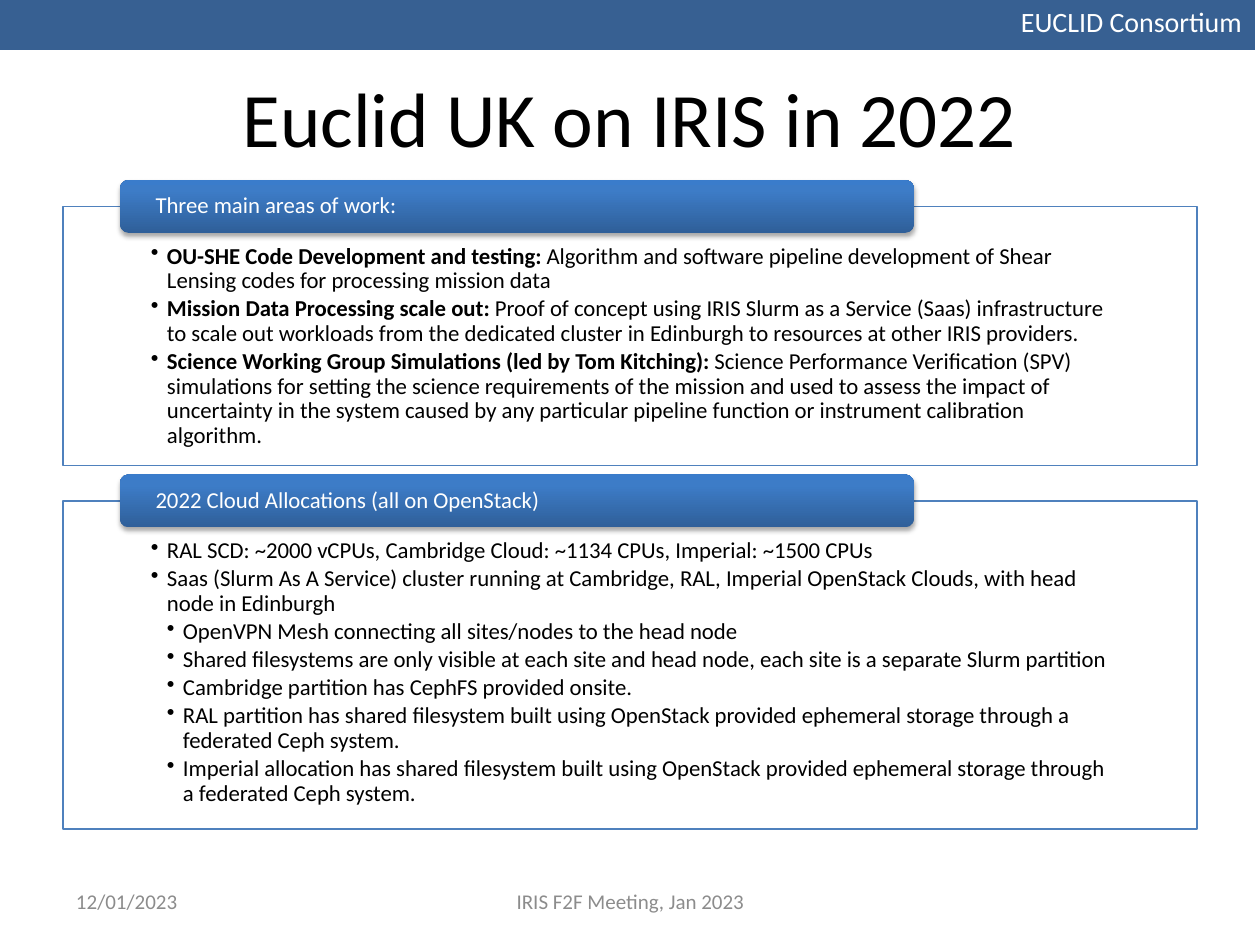
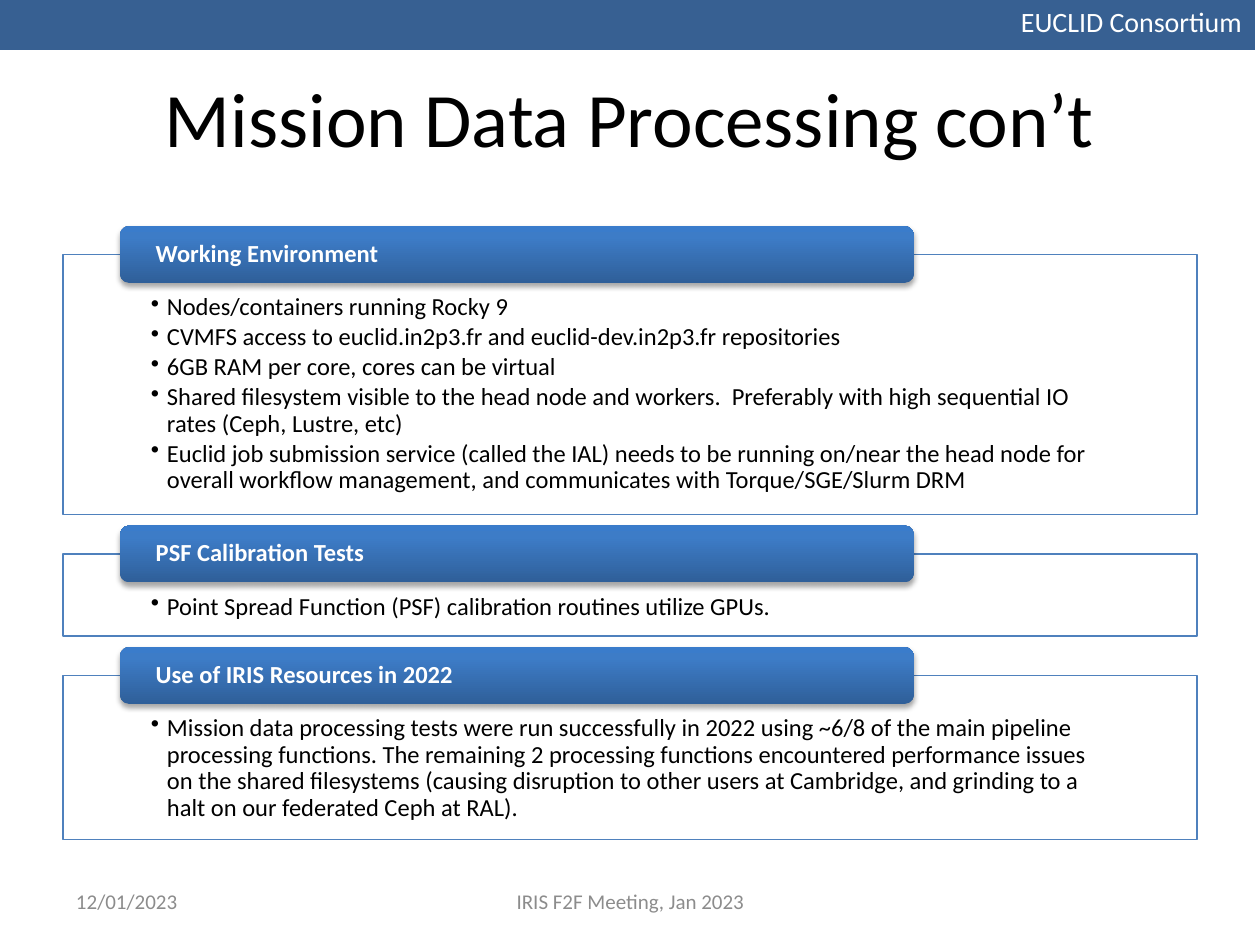
from lxml import etree
from pptx import Presentation
from pptx.dml.color import RGBColor
from pptx.enum.shapes import MSO_SHAPE
from pptx.enum.text import MSO_ANCHOR as ANCHOR, PP_ALIGN as ALIGN
from pptx.oxml import parse_xml
from pptx.oxml.ns import nsdecls, qn
from pptx.util import Emu, Pt

BAND_BLUE = RGBColor(0x37, 0x60, 0x92)
BORDER_BLUE = RGBColor(0x4F, 0x81, 0xBD)
WHITE = RGBColor(0xFF, 0xFF, 0xFF)
BLACK = RGBColor(0x00, 0x00, 0x00)
FOOTER_GREY = RGBColor(0x8C, 0x8C, 0x8C)
TAB_GRADIENT = [(0, "2F5F99"), (80, "3D7CC7"), (100, "3A7CCB")]
FONT = "Calibri"

BAND_TEXT = "EUCLID Consortium"
FOOTERS = [  # text, left, width, alignment
    ("12/01/2023", 63, 294, ALIGN.LEFT),
    ("IRIS F2F Meeting, Jan 2023", 431, 399, ALIGN.CENTER),
]

# Sections hold a heading, the panel height and (level, bold lead, text) bullets.
SLIDES = [
    {
        "title": "Euclid UK on IRIS in 2022",
        "top": 180, "tab_height": 53, "gap": 9, "size": 13, "bold_tabs": False,
        "insets": (88, 38, 88, 13),
        "sections": [
            ("Three main areas of work:", 259, [
                (1, "OU-SHE Code Development and testing:",
                 " Algorithm and software pipeline development of Shear Lensing codes "
                 "for processing mission data"),
                (1, "Mission Data Processing scale out:",
                 " Proof of concept using IRIS Slurm as a Service (Saas) infrastructure "
                 "to scale out workloads from the dedicated cluster in Edinburgh to "
                 "resources at other IRIS providers."),
                (1, "Science Working Group Simulations (led by Tom Kitching):",
                 " Science Performance Verification (SPV) simulations for setting the "
                 "science requirements of the mission and used to assess the impact of "
                 "uncertainty in the system caused by any particular pipeline function "
                 "or instrument calibration algorithm."),
            ]),
            ("2022 Cloud Allocations (all on OpenStack)", 328, [
                (1, "", "RAL SCD: ~2000 vCPUs, Cambridge Cloud: ~1134 CPUs, "
                        "Imperial: ~1500 CPUs"),
                (1, "", "Saas (Slurm As A Service) cluster running at Cambridge, RAL, "
                        "Imperial OpenStack Clouds, with head node in Edinburgh"),
                (2, "", "OpenVPN Mesh connecting all sites/nodes to the head node"),
                (2, "", "Shared filesystems are only visible at each site and head node, "
                        "each site is a separate Slurm partition"),
                (2, "", "Cambridge partition has CephFS provided onsite."),
                (2, "", "RAL partition has shared filesystem built using OpenStack "
                        "provided ephemeral storage through a federated Ceph system."),
                (2, "", "Imperial allocation has shared filesystem built using OpenStack "
                        "provided ephemeral storage through a federated Ceph system."),
            ]),
        ],
    },
    {
        "title": "Mission Data Processing con’t",
        "top": 226, "tab_height": 57, "gap": 11, "size": 14, "bold_tabs": True,
        "insets": (88, 40, 88, 14),
        "sections": [
            ("Working Environment", 260, [
                (1, "", "Nodes/containers running Rocky 9"),
                (1, "", "CVMFS access to euclid.in2p3.fr and euclid-dev.in2p3.fr "
                        "repositories"),
                (1, "", "6GB RAM per core, cores can be virtual"),
                (1, "", "Shared filesystem visible to the head node and workers.  "
                        "Preferably with high sequential IO rates (Ceph, Lustre, etc)"),
                (1, "", "Euclid job submission service (called the IAL) needs to be "
                        "running on/near the head node for overall workflow management, "
                        "and communicates with Torque/SGE/Slurm DRM"),
            ]),
            ("PSF Calibration Tests", 82, [
                (1, "", "Point Spread Function (PSF) calibration routines utilize GPUs."),
            ]),
            ("Use of IRIS Resources in 2022", 164, [
                (1, "", "Mission data processing tests were run successfully in 2022 "
                        "using ~6/8 of the main pipeline processing functions. The "
                        "remaining 2 processing functions encountered performance issues "
                        "on the shared filesystems (causing disruption to other users at "
                        "Cambridge, and grinding to a halt on our federated Ceph at RAL)."),
            ]),
        ],
    },
]

SLIDE_SIZE = (1260, 945)
PANEL_LEFT, PANEL_WIDTH = 63, 1134
TAB_LEFT, TAB_WIDTH = 120, 794
BULLET_INDENT = 16


def px(length):
    return Emu(round(length * 914400 / 126))


def style(paragraph, size, color, bold=None, align=ALIGN.LEFT, spacing=None):
    paragraph.alignment = align
    paragraph.line_spacing = spacing
    font = paragraph.font
    font.name, font.size, font.bold = FONT, Pt(size), bold
    font.color.rgb = color


def set_frame(frame, anchor, insets=(13, 6, 13, 6)):
    frame.word_wrap = True
    frame.vertical_anchor = anchor
    (frame.margin_left, frame.margin_top,
     frame.margin_right, frame.margin_bottom) = map(px, insets)


def add_text(slide, box, text, size, color, align):
    frame = slide.shapes.add_textbox(*map(px, box)).text_frame
    set_frame(frame, ANCHOR.MIDDLE)
    frame.text = text
    style(frame.paragraphs[0], size, color, align=align)


def add_box(slide, kind, box, fill=None):
    shape = slide.shapes.add_shape(kind, *map(px, box))
    shape.shadow.inherit = False
    shape.line.fill.background()
    if fill is not None:
        shape.fill.solid()
        shape.fill.fore_color.rgb = fill
    return shape


def add_bullet(paragraph, level):
    properties = paragraph._p.get_or_add_pPr()
    properties.set("marL", str(px(level * BULLET_INDENT)))
    properties.set("indent", str(px(-BULLET_INDENT)))
    etree.SubElement(properties, qn("a:buChar")).set("char", "•")


def add_panel(slide, top, height, bullets, size, insets):
    panel = add_box(slide, MSO_SHAPE.RECTANGLE,
                    (PANEL_LEFT, top, PANEL_WIDTH, height), WHITE)
    color = panel._element.spPr.find(qn("a:solidFill"))[0]
    etree.SubElement(color, qn("a:alpha")).set("val", "90000")
    panel.line.color.rgb = BORDER_BLUE
    panel.line.width = Pt(0.75)
    frame = panel.text_frame
    set_frame(frame, ANCHOR.TOP, insets)
    for index, (level, lead, text) in enumerate(bullets):
        paragraph = frame.add_paragraph() if index else frame.paragraphs[0]
        paragraph.level = level
        add_bullet(paragraph, level)
        style(paragraph, size, BLACK, spacing=0.9)
        paragraph.space_after = Pt(2)
        if lead:
            run = paragraph.add_run()
            run.text = lead
            run.font.bold = True
        paragraph.add_run().text = text


def add_tab(slide, top, height, heading, size, bold):
    """Add the raised gradient heading that overlaps a panel's top edge."""
    tab = add_box(slide, MSO_SHAPE.ROUNDED_RECTANGLE,
                  (TAB_LEFT, top, TAB_WIDTH, height))
    stops = "".join(f'<a:gs pos="{position * 1000}"><a:srgbClr val="{color}"/></a:gs>'
                    for position, color in TAB_GRADIENT)
    properties = tab._element.spPr
    properties.find(qn("a:ln")).addprevious(parse_xml(
        f'<a:gradFill {nsdecls("a")} rotWithShape="1"><a:gsLst>{stops}</a:gsLst>'
        '<a:lin ang="16200000" scaled="0"/></a:gradFill>'))
    properties.find(qn("a:effectLst")).append(parse_xml(
        f'<a:outerShdw {nsdecls("a")} blurRad="{Pt(3.1)}" dist="{Pt(1.8)}" '
        'dir="5400000" rotWithShape="0"><a:srgbClr val="000000">'
        '<a:alpha val="35000"/></a:srgbClr></a:outerShdw>'))
    frame = tab.text_frame
    set_frame(frame, ANCHOR.MIDDLE, (33, 0, 33, 0))
    frame.text = heading
    style(frame.paragraphs[0], size, WHITE, bold, spacing=0.9)


def add_frame(slide, title):
    """Add the band, title and footers that every slide has."""
    band = add_box(slide, MSO_SHAPE.RECTANGLE, (-5, -4, 1260, 54), BAND_BLUE)
    set_frame(band.text_frame, ANCHOR.MIDDLE)
    band.text_frame.text = BAND_TEXT
    style(band.text_frame.paragraphs[0], 16, WHITE, align=ALIGN.RIGHT, spacing=0.9)
    add_text(slide, (63, 38, 1134, 158), title, 44, BLACK, ALIGN.CENTER)
    for text, left, width, align in FOOTERS:
        add_text(slide, (left, 876, width, 50), text, 12, FOOTER_GREY, align)


def main():
    presentation = Presentation()
    presentation.slide_width, presentation.slide_height = map(px, SLIDE_SIZE)
    for content in SLIDES:
        slide = presentation.slides.add_slide(presentation.slide_layouts[6])
        add_frame(slide, content["title"])
        top, tab_height, size = content["top"], content["tab_height"], content["size"]
        for heading, height, bullets in content["sections"]:
            panel_top = top + tab_height / 2
            add_panel(slide, panel_top, height, bullets, size, content["insets"])
            add_tab(slide, top, tab_height, heading, size, content["bold_tabs"])
            top = panel_top + height + content["gap"]
    presentation.save("out.pptx")


if __name__ == "__main__":
    main()
